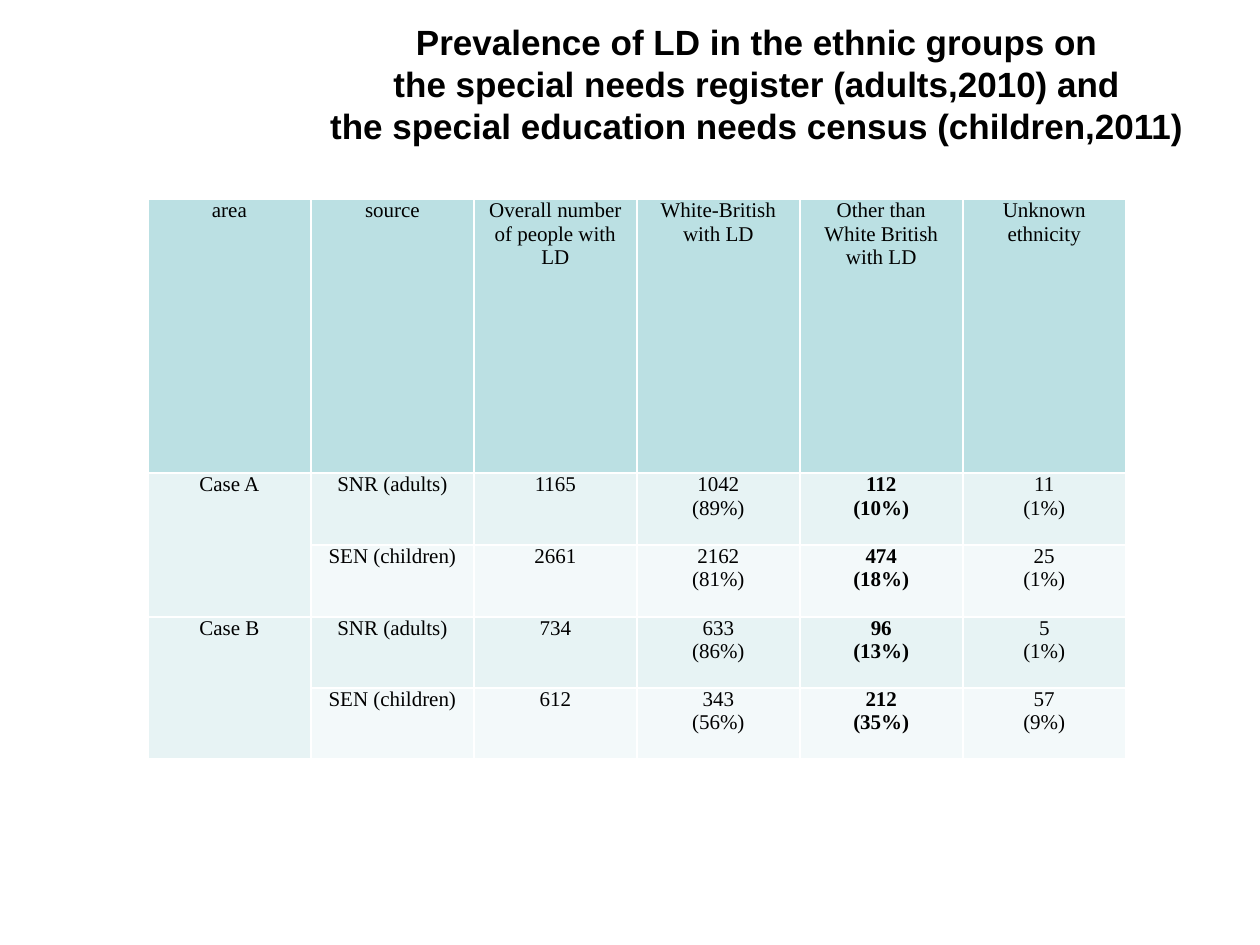
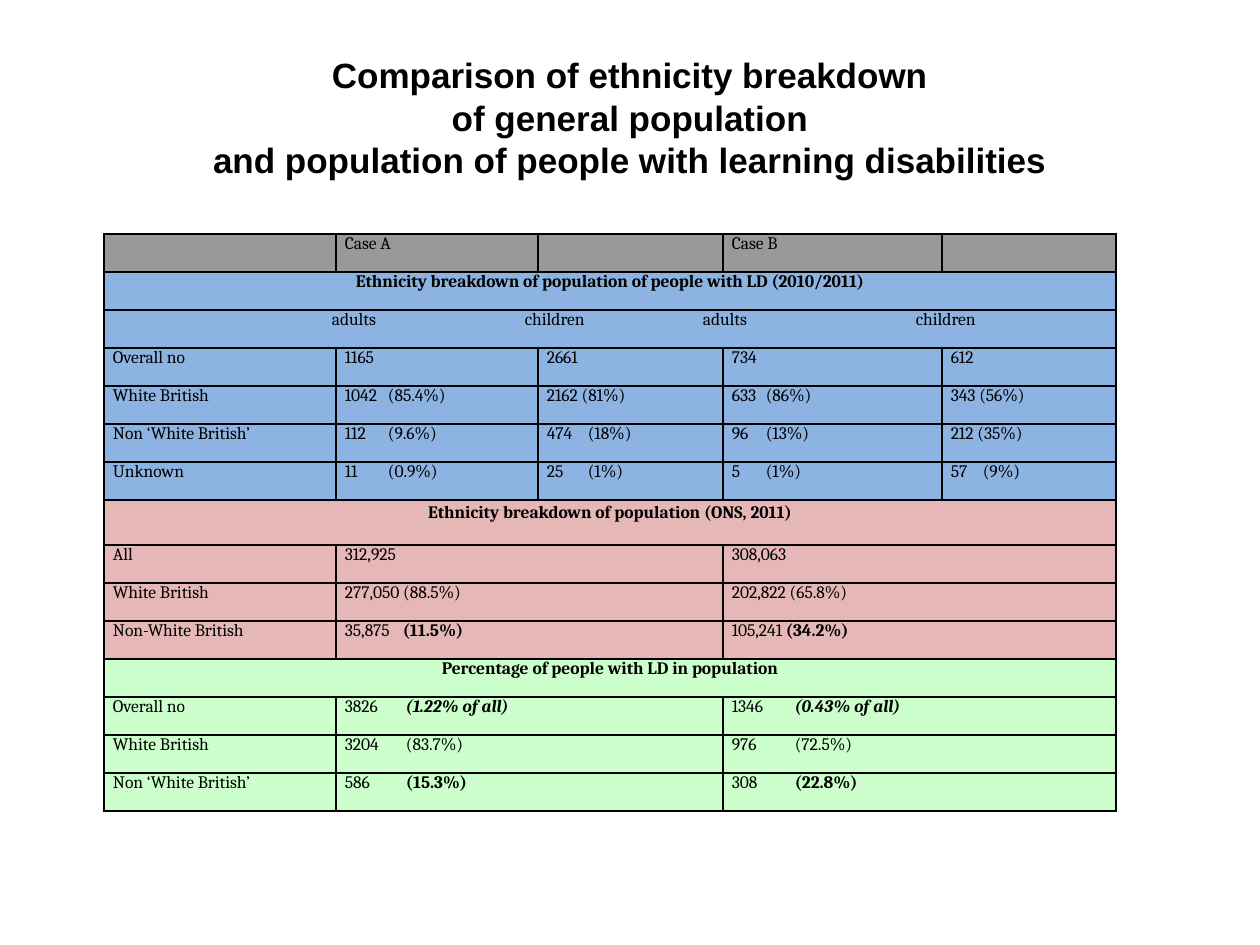
import pptx
import pptx.util
import pptx.dml.color
import pptx.enum.text
import pptx.oxml.ns
from lxml import etree

PX = 914400 // 126
COLORS = {
    "ink": "000000", "paper": "FFFFFF",
    "heading": "BBE0E3", "adults": "E7F3F4", "children": "F3F9FA",
    "cases": "999999", "disability": "8DB3E2", "population": "E5B8B7", "share": "CCFFCC",
}
qn = pptx.oxml.ns.qn
Pt = pptx.util.Pt
rgb = pptx.dml.color.RGBColor.from_string
CENTER = pptx.enum.text.PP_ALIGN.CENTER
LEFT = pptx.enum.text.PP_ALIGN.LEFT

deck = pptx.Presentation()
deck.slide_width = 1260 * PX
deck.slide_height = 945 * PX


def add_titled_slide(title, left, top, width):
    slide = deck.slides.add_slide(deck.slide_layouts[6])
    heading = slide.shapes.add_textbox(left * PX, top * PX, width * PX, 158 * PX).text_frame
    heading.word_wrap = True
    heading.vertical_anchor = pptx.enum.text.MSO_ANCHOR.MIDDLE
    heading.margin_left = heading.margin_right = 0
    lines = heading.paragraphs[0]
    lines.text = title
    lines.alignment = CENTER
    lines.line_spacing = Pt(24)
    for run in lines.runs:
        run.font.name, run.font.size, run.font.bold = "Arial", Pt(20), True
        run.font.color.rgb = rgb(COLORS["ink"])
    return slide


def style_cell(cell, text, font, size, fill, border, align, stops=()):
    cell.margin_left = cell.margin_right = 9 * PX
    cell.margin_top = cell.margin_bottom = 0
    properties = cell._tc.get_or_add_tcPr()
    for side in ("a:lnL", "a:lnR", "a:lnT", "a:lnB"):
        line = etree.SubElement(properties, qn(side), w="12700")
        solid = etree.SubElement(line, qn("a:solidFill"))
        etree.SubElement(solid, qn("a:srgbClr"), val=COLORS[border])
    cell.fill.solid()
    cell.fill.fore_color.rgb = rgb(COLORS[fill])
    for index, line_text in enumerate(text.split("\n")):
        frame = cell.text_frame
        paragraph = frame.paragraphs[0] if index == 0 else frame.add_paragraph()
        paragraph.alignment = align
        if stops:
            tabs = etree.SubElement(paragraph._p.get_or_add_pPr(), qn("a:tabLst"))
            for stop in stops:
                etree.SubElement(tabs, qn("a:tab"), pos=str(stop * PX), algn="l")
        for emphasis, part in enumerate(line_text.split("|")):
            if part:
                run = paragraph.add_run()
                run.text = part
                run.font.name, run.font.size = font, Pt(size)
                run.font.bold = emphasis == 1
                run.font.italic = "of all" in part
                run.font.color.rgb = rgb(COLORS["ink"])


prevalence_slide = add_titled_slide(
    "Prevalence of LD in the ethnic groups on\v"
    "the special needs register (adults,2010) and\v"
    "the special education needs census (children,2011)", 316, 4, 882)

prevalence_rows = [
    ("area", "source", "Overall number of people with LD", "White-British with LD",
     "Other than White British with LD", "Unknown ethnicity"),
    ("Case A", "SNR (adults)", "1165", "1042\n(89%)", "|112\n|(10%)", "11\n(1%)"),
    ("", "SEN (children)", "2661", "2162\n(81%)", "|474\n|(18%)", "25\n(1%)"),
    ("Case B", "SNR (adults)", "734", "633\n(86%)", "|96\n|(13%)", "5\n(1%)"),
    ("", "SEN (children)", "612", "343\n(56%)", "|212\n|(35%)", "57\n(9%)"),
]
prevalence = prevalence_slide.shapes.add_table(
    5, 6, 148 * PX, 199 * PX, 978 * PX, 560 * PX).table
prevalence.first_row = prevalence.horz_banding = False
for row, height in zip(prevalence.rows, (274, 72, 72, 71, 71)):
    row.height = height * PX
for column in prevalence.columns:
    column.width = 163 * PX
for r, texts in enumerate(prevalence_rows):
    fill = "heading" if r == 0 else "adults" if r % 2 else "children"
    for c, text in enumerate(texts):
        style_cell(prevalence.cell(r, c), text, "Times New Roman", 12, fill, "paper", CENTER)
for r in (1, 3):
    prevalence.cell(r, 0).merge(prevalence.cell(r + 1, 0))

comparison_slide = add_titled_slide(
    "Comparison of ethnicity breakdown\vof general population\v"
    "and population of people with learning disabilities", 63, 38, 1134)

sections = [
    ("cases", {}, [("", "Case A", "", "Case B", "")]),
    ("disability", {0: (219, 412, 590, 803), 1: (43,), 2: (41,), 3: (34,), 4: (32,)}, [
        ("|Ethnicity breakdown of population of people with LD (2010/2011)",),
        ("\tadults\tchildren\tadults\tchildren",),
        ("Overall no", "1165", "2661", "734", "612"),
        ("White British", "1042\t(85.4%)", "2162 (81%)", "633\t(86%)", "343 (56%)"),
        ("Non ‘White British’", "112\t(9.6%)", "474\t(18%)", "96\t(13%)", "212 (35%)"),
        ("Unknown", "11\t(0.9%)", "25\t(1%)", "5\t(1%)", "57\t(9%)"),
    ]),
    ("population", {1: (58,)}, [
        ("|Ethnicity breakdown of population (ONS, 2011)",),
        ("All", "312,925", "308,063"),
        ("White British", "277,050 (88.5%)", "202,822 (65.8%)"),
        ("Non-White British", "35,875\t|(11.5%)", "105,241 |(34.2%)"),
    ]),
    ("share", {1: (61,), 3: (63,)}, [
        ("|Percentage of people with LD in population",),
        ("Overall no", "3826\t|(1.22% of all)", "1346\t|(0.43% of all)"),
        ("White British", "3204\t(83.7%)", "976\t(72.5%)"),
        ("Non ‘White British’", "586\t|(15.3%)", "308\t|(22.8%)"),
    ]),
]
first_columns = {1: (0,), 3: (0, 1, 3), 5: (0, 1, 2, 3, 4)}
ons_row = 7

comparison = comparison_slide.shapes.add_table(
    15, 5, 104 * PX, 234 * PX, 1012 * PX, 577 * PX).table
comparison.first_row = comparison.horz_banding = False
for column, width in zip(comparison.columns, (232, 202, 185, 219, 174)):
    column.width = width * PX
for r, row in enumerate(comparison.rows):
    row.height = (45 if r == ons_row else 38) * PX

r = 0
for fill, stops, rows in sections:
    for texts in rows:
        starts = first_columns[len(texts)]
        placed = dict(zip(starts, texts))
        for c in range(5):
            text = placed.get(c, "")
            style_cell(comparison.cell(r, c), text, "Cambria", 10, fill, "ink",
                       CENTER if text.startswith("|") else LEFT,
                       stops.get(c, ()) if "\t" in text else ())
        for start, following in zip(starts, starts[1:] + (5,)):
            if following - start > 1:
                comparison.cell(r, start).merge(comparison.cell(r, following - 1))
        r += 1
comparison.cell(ons_row, 0).margin_top = 3 * PX

deck.save("out.pptx")
